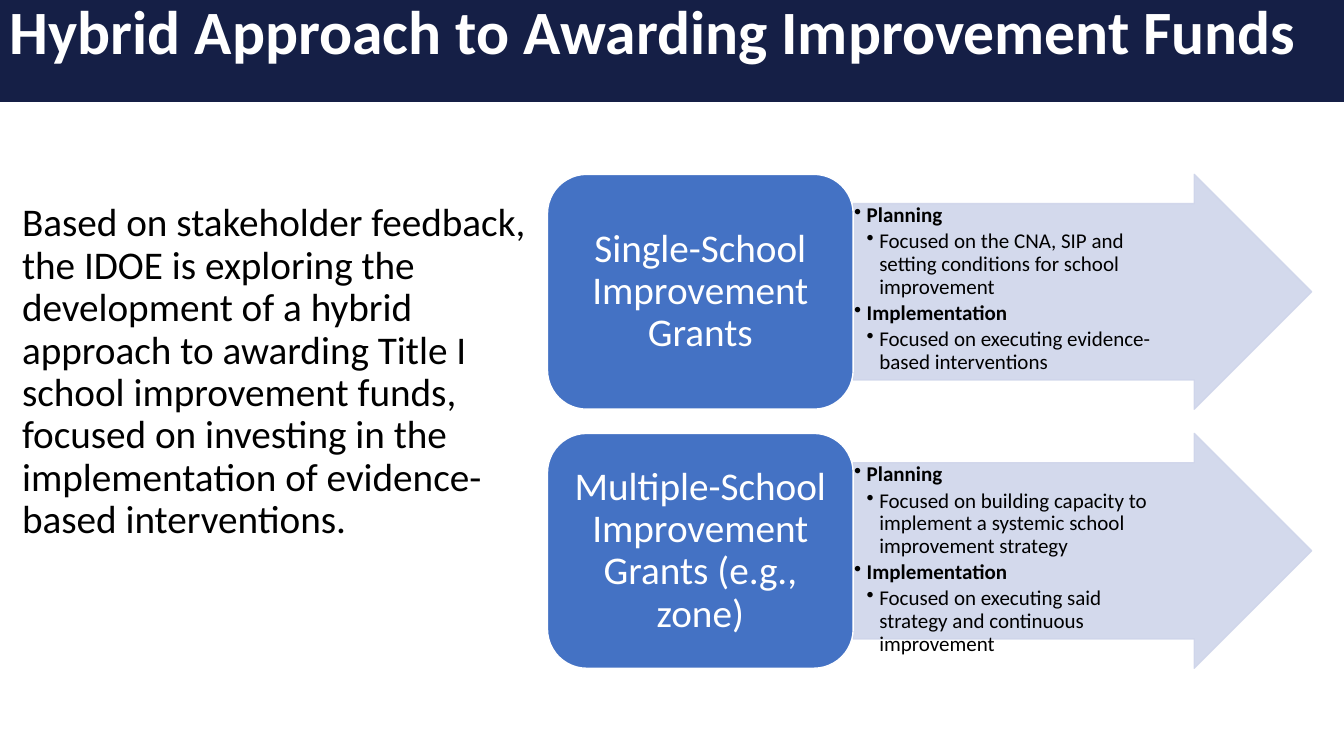
from lxml import etree
from pptx import Presentation
from pptx.dml.color import RGBColor
from pptx.enum import shapes, text
from pptx.oxml.ns import qn
from pptx.util import Inches, Pt

NAVY, BLUE, PALE, WHITE, BLACK = "151F46", "4472C4", "CFD5EA", "FFFFFF", "000000"
KIND = shapes.MSO_SHAPE
ALIGN = text.PP_ALIGN
MIDDLE = text.MSO_ANCHOR.MIDDLE

GRANTS = [
    ("Single-School Improvement Grants", [
        ("Planning",
         "Focused on the CNA, SIP and setting conditions for school improvement"),
        ("Implementation",
         "Focused on executing evidence-based interventions"),
    ]),
    ("Multiple-School Improvement Grants (e.g., zone)", [
        ("Planning",
         "Focused on building capacity to implement a systemic school improvement strategy"),
        ("Implementation",
         "Focused on executing said strategy and continuous improvement"),
    ]),
]


def color(code):
    return RGBColor.from_string(code)


def fade(fill, percent):
    """Set the opacity of a solid fill."""
    tint = fill._xPr.find(qn("a:solidFill"))[0]
    etree.SubElement(tint, qn("a:alpha"), val=str(percent * 1000))


def frame(shape, insets=(0.1, 0.05, 0.1, 0.05), anchor=text.MSO_ANCHOR.TOP):
    body = shape.text_frame
    body.word_wrap = True
    body.vertical_anchor = anchor
    body.margin_left, body.margin_top, body.margin_right, body.margin_bottom = map(Inches, insets)
    return body


def write(body, words, size, ink=BLACK, bold=False, align=ALIGN.LEFT, level=0, after=0):
    """Add a paragraph; a level of 1 or more gives it a bullet."""
    para = body.paragraphs[0]
    if para.runs:
        para = body.add_paragraph()
    para.alignment = align
    para.line_spacing = 0.9
    para.space_after = Pt(after)
    if level:
        props = para._p.get_or_add_pPr()
        props.set("marL", str(Inches(0.125 * level)))
        props.set("indent", str(Inches(-0.125)))
        etree.SubElement(props, qn("a:buChar"), char="•")
    run = para.add_run()
    run.text = words
    run.font.name = "Calibri"
    run.font.size = Pt(size)
    run.font.bold = bold
    run.font.color.rgb = color(ink)


def block(slide, kind, box, fill, line=None):
    shape = slide.shapes.add_shape(kind, *map(Inches, box))
    shape.shadow.inherit = False
    shape.fill.solid()
    shape.fill.fore_color.rgb = color(fill)
    if line:
        shape.line.color.rgb = color(line)
        shape.line.width = Pt(1)
    else:
        shape.line.fill.background()
    return shape


def banner(slide, box):
    bar = block(slide, KIND.RECTANGLE, box, NAVY)
    write(frame(bar), "Hybrid Approach to Awarding Improvement Funds", 44, WHITE, bold=True)


def intro(slide, box):
    note = slide.shapes.add_textbox(*map(Inches, box))
    write(frame(note, anchor=MIDDLE),
          "Based on stakeholder feedback, the IDOE is exploring the development of a "
          "hybrid approach to awarding Title I school improvement funds, focused on "
          "investing in the implementation of evidence-based interventions.", 28)


def grant(slide, box, name, phases):
    """Place a rounded label and, to its right, an arrow listing the phases."""
    left, top, width, height = box
    split = 0.4 * width
    arrow = block(slide, KIND.RIGHT_ARROW, (left + split, top, width - split, height), PALE, PALE)
    arrow.adjustments[0], arrow.adjustments[1] = 0.75, 0.5
    fade(arrow.fill, 90)
    fade(arrow.line.fill, 90)
    body = frame(arrow, (0.01, 0.01, 0.6, 0.01))
    for phase, focus in phases:
        write(body, phase, 15, bold=True, level=1, after=2.5)
        write(body, focus, 15, level=2, after=2.5)

    label = block(slide, KIND.ROUNDED_RECTANGLE, (left, top, split, height), BLUE, WHITE)
    write(frame(label, (0.12, 0.06, 0.12, 0.06), MIDDLE), name, 28, WHITE, align=ALIGN.CENTER)


def main():
    deck = Presentation()
    deck.slide_width, deck.slide_height = Inches(13.33), Inches(7.5)
    slide = deck.slides.add_slide(deck.slide_layouts[6])
    intro(slide, (0.12, 2.97, 5.22, 1.45))
    for row, (name, phases) in enumerate(GRANTS):
        grant(slide, (5.43, 1.73 + 2.57 * row, 7.58, 2.33), name, phases)
    banner(slide, (0, -0.04, 13.33, 1.05))
    deck.save("out.pptx")


if __name__ == "__main__":
    main()
